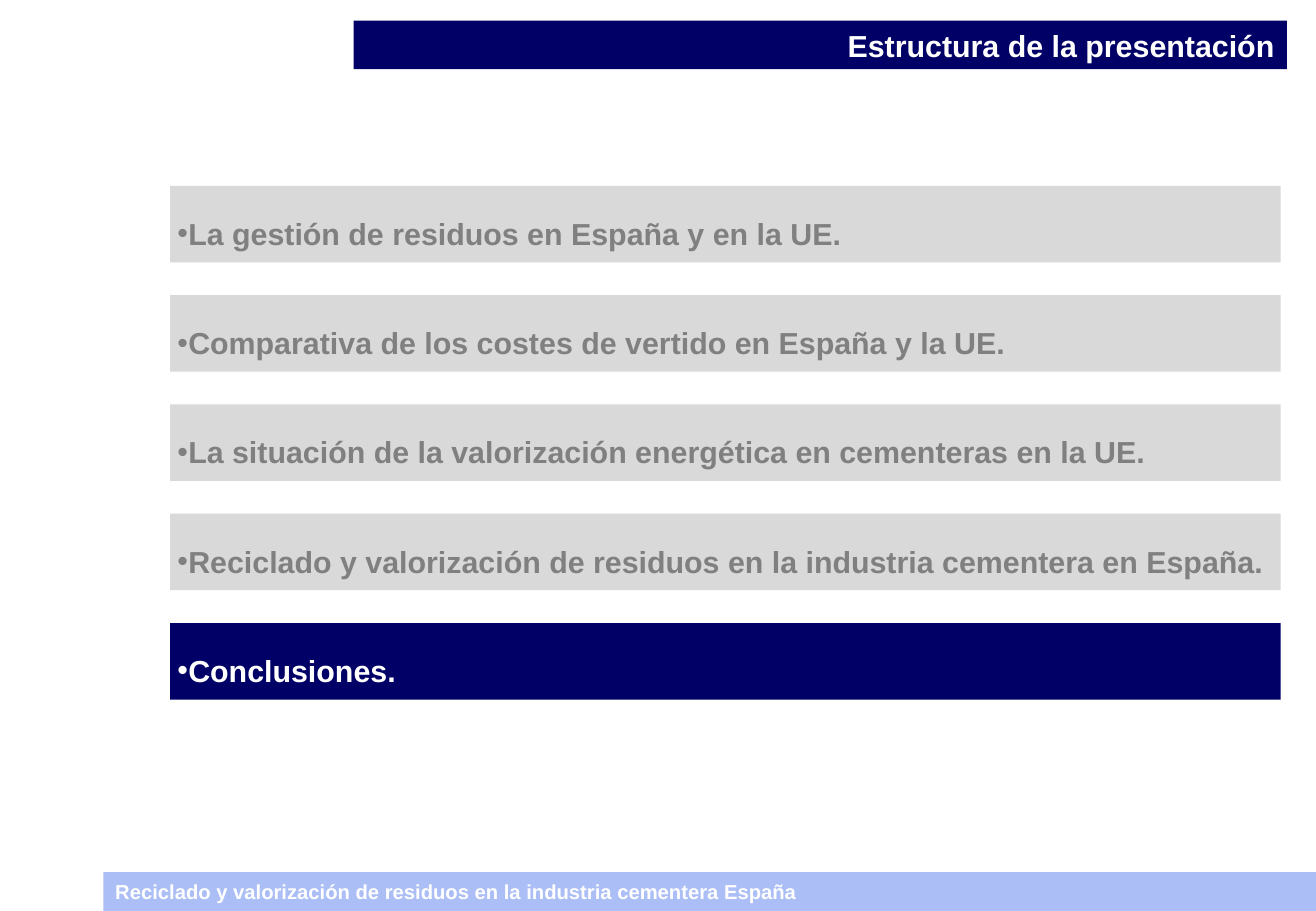
import dataclasses

import lxml.etree
import pptx
import pptx.dml.color
import pptx.enum.shapes
import pptx.enum.text
import pptx.oxml.ns
import pptx.util

Inches = pptx.util.Inches
RGBColor = pptx.dml.color.RGBColor
Align = pptx.enum.text.PP_ALIGN
Anchor = pptx.enum.text.MSO_ANCHOR

NAVY = RGBColor(0x00, 0x00, 0x66)
SKY = RGBColor(0xAB, 0xBE, 0xF5)
SILVER = RGBColor(0xD9, 0xD9, 0xD9)
GRAY = RGBColor(0x80, 0x80, 0x80)
WHITE = RGBColor(0xFF, 0xFF, 0xFF)

TOPICS = (
    "La gestión de residuos en España y en la UE.",
    "Comparativa de los costes de vertido en España y la UE.",
    "La situación de la valorización energética en cementeras en la UE.",
    "Reciclado y valorización de residuos en la industria cementera en España.",
    "Conclusiones.",
)
CURRENT = 4
FIRST, STEP = 1.53, 0.9


@dataclasses.dataclass(frozen=True)
class Bar:
    text: str
    left: float
    top: float
    width: float
    height: float
    fill: RGBColor
    color: RGBColor = WHITE
    size: int = 18
    align: Align = Align.LEFT
    anchor: Anchor = Anchor.MIDDLE
    inset: float = 0.1
    bullet: bool = False


def apply(target: object, values: dict) -> None:
    for name, value in values.items():
        setattr(target, name, value)


def mark(para) -> None:
    para.line_spacing = 1.5
    props = para._p.get_or_add_pPr()
    props.set("marL", str(Inches(0.09)))
    props.set("indent", str(-Inches(0.09)))
    qn = pptx.oxml.ns.qn
    lxml.etree.SubElement(props, qn("a:buFont")).set("typeface", "Arial")
    lxml.etree.SubElement(props, qn("a:buChar")).set("char", "•")


def style(shape, bar: Bar) -> None:
    apply(shape, {
        "left": Inches(bar.left), "top": Inches(bar.top),
        "width": Inches(bar.width), "height": Inches(bar.height),
    })
    shape.fill.solid()
    shape.fill.fore_color.rgb = bar.fill
    shape.line.fill.background()
    frame = shape.text_frame
    apply(frame, {
        "word_wrap": True, "auto_size": pptx.enum.text.MSO_AUTO_SIZE.NONE,
        "vertical_anchor": bar.anchor,
        "margin_left": Inches(bar.inset), "margin_right": Inches(bar.inset),
        "margin_top": Inches(0.05), "margin_bottom": Inches(0.05),
    })
    para = frame.paragraphs[0]
    apply(para, {"alignment": bar.align, "space_before": pptx.util.Pt(0)})
    if bar.bullet:
        mark(para)
    run = para.add_run()
    run.text = bar.text
    apply(run.font, {"name": "Arial", "size": pptx.util.Pt(bar.size), "bold": True})
    run.font.color.rgb = bar.color


def draw(slide, bar: Bar) -> None:
    kind = pptx.enum.shapes.MSO_SHAPE.RECTANGLE
    shape = slide.shapes.add_shape(kind, 0, 0, 0, 0)
    shape.shadow.inherit = False
    style(shape, bar)


def main() -> None:
    deck = pptx.Presentation()
    apply(deck, {"slide_width": Inches(10.83), "slide_height": Inches(7.5)})
    slide = deck.slides.add_slide(deck.slide_layouts.get_by_name("Title Only"))
    style(slide.shapes.title, Bar(
        "Estructura de la presentación", 2.91, 0.17, 7.68, 0.4, NAVY,
        align=Align.RIGHT, anchor=Anchor.TOP))
    draw(slide, Bar(
        "Reciclado y valorización de residuos en la industria cementera España",
        0.85, 7.18, 9.98, 0.32, SKY, size=12))
    for i, topic in enumerate(TOPICS):
        fill, color = (NAVY, WHITE) if i == CURRENT else (SILVER, GRAY)
        draw(slide, Bar(
            topic, 1.4, FIRST + i * STEP, 9.14, 0.63, fill, color,
            align=Align.JUSTIFY, inset=0.06, bullet=True))
    deck.save("out.pptx")


if __name__ == "__main__":
    main()
